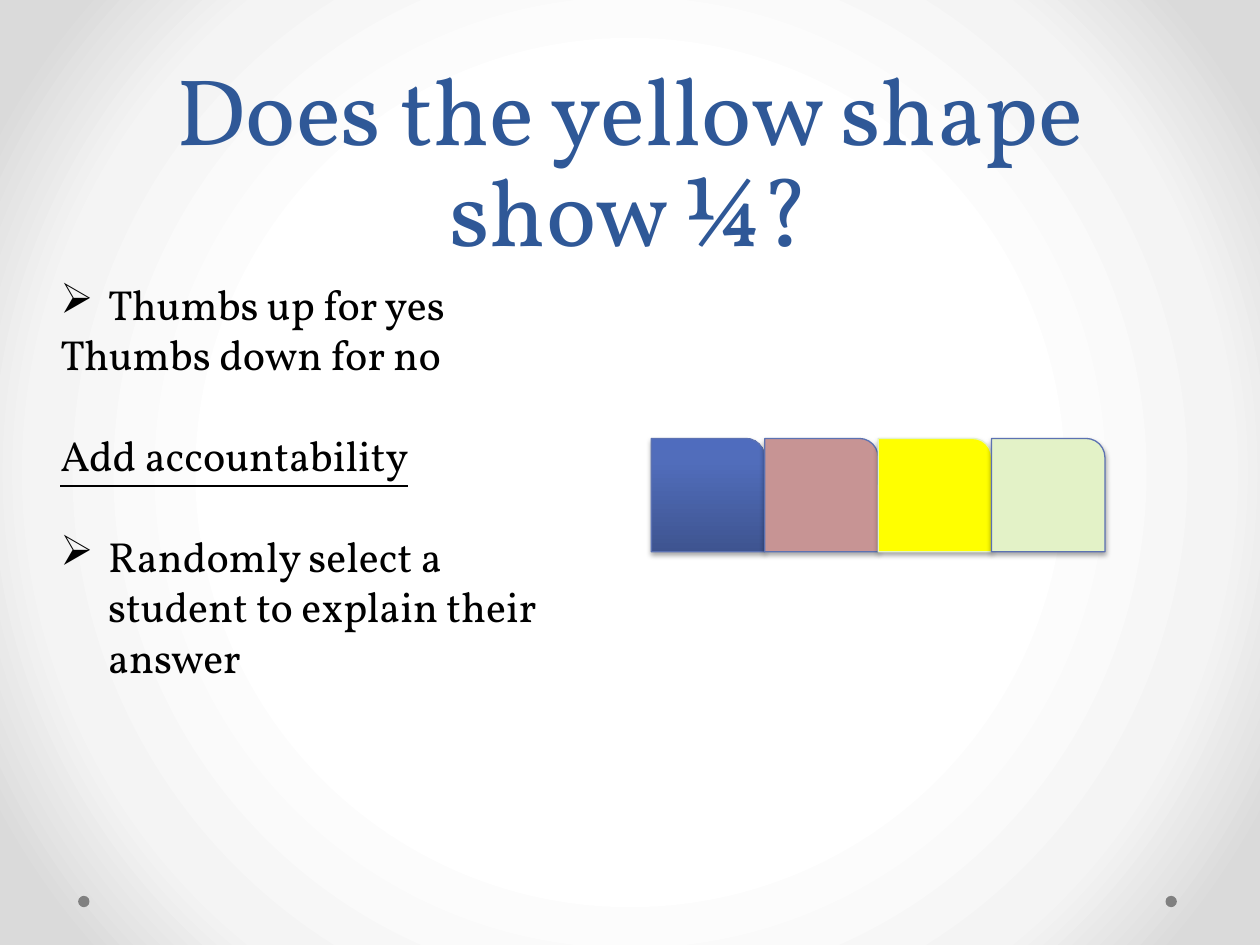
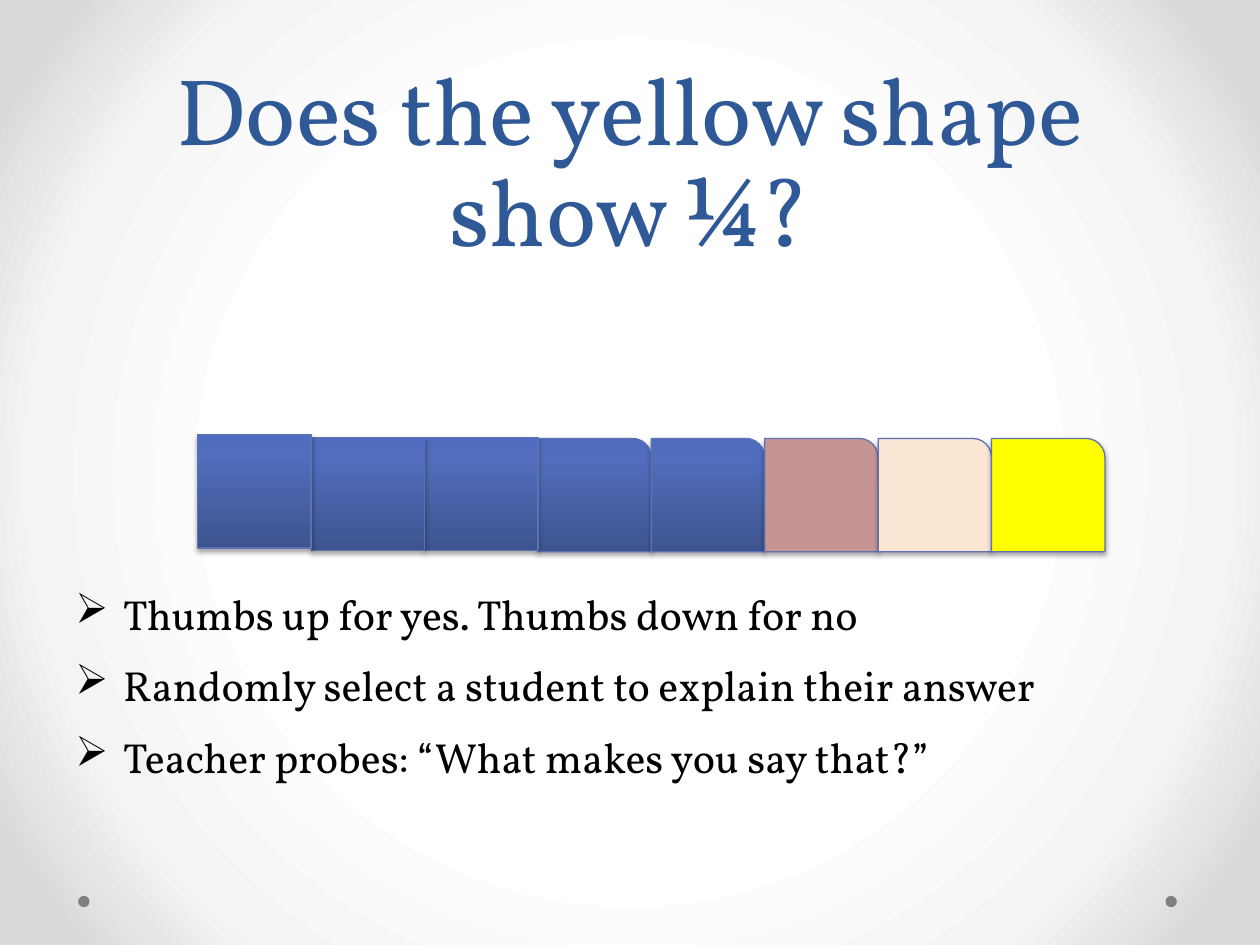
from lxml import etree
from pptx import Presentation
from pptx.dml.color import RGBColor
from pptx.enum.shapes import MSO_SHAPE as SHAPE
from pptx.enum.text import MSO_ANCHOR, MSO_AUTO_SIZE as AUTO, PP_ALIGN
from pptx.oxml import parse_xml
from pptx.oxml.ns import nsdecls, qn
from pptx.util import Inches, Pt

FONT = "Vollkorn"
COLORS = {
    "title": "2F5897", "text": "000000", "dot": "808080", "outline": "5C72B2",
    "rose": "C79494", "yellow": "FFFF00", "green": "E3F2C7", "peach": "FAE6D3",
}
BACKDROP = [(50, "FFFFFF"), (76, "F4F4F4"), (92, "DADADA")]
BLUE = [(0, "3E5490"), (80, "516DBB"), (100, "4F6CBE")]
CIRCLE = '<a:path path="circle"><a:fillToRect l="50000" t="50000" r="50000" b="50000"/></a:path>'
UPWARD = '<a:lin ang="16200000" scaled="0"/>'
TILE = 0.9
TILE_TOP = 3.48


def rgb(name):
    return RGBColor.from_string(COLORS[name])


def set_gradient(fill, owner, stops, direction):
    """Fill the owner element with a gradient of (percent, colour) stops."""
    fill.gradient()
    marks = "".join(f'<a:gs pos="{pos * 1000}"><a:srgbClr val="{color}"/></a:gs>'
                    for pos, color in stops)
    old = owner.find(qn("a:gradFill"))
    owner.replace(old, parse_xml(
        f'<a:gradFill {nsdecls("a")} rotWithShape="1"><a:gsLst>{marks}</a:gsLst>'
        f'{direction}</a:gradFill>'))


def add_text(p, text, size=24, color="text", underline=False):
    r = p.add_run()
    r.text = text
    r.font.name = FONT
    r.font.size = Pt(size)
    r.font.color.rgb = rgb(color)
    if underline:
        r.font.underline = True


class Deck:
    def __init__(self):
        self.prs = Presentation()
        self.prs.slide_width, self.prs.slide_height = Inches(10), Inches(7.5)
        self.s = None
        # Shared background
        master = self.prs.slide_master
        fill = master.background.fill
        fill.solid()
        set_gradient(fill, master.element.find(".//" + qn("p:bgPr")), BACKDROP, CIRCLE)

    def slide(self, title):
        self.s = self.prs.slides.add_slide(self.prs.slide_layouts[5])
        for left in (9.25, 0.62):
            self.dot(left)
        self.title(title)

    def shape(self, kind, left, top, size):
        sp = self.s.shapes.add_shape(kind, Inches(left), Inches(top), Inches(size), Inches(size))
        sp.shadow.inherit = False
        return sp

    def dot(self, left):
        sp = self.shape(SHAPE.OVAL, left, 7.11, 0.09)
        sp.fill.solid()
        sp.fill.fore_color.rgb = rgb("dot")
        sp.line.fill.background()

    def title(self, text):
        sp = self.s.shapes.title
        sp.left, sp.top, sp.width, sp.height = map(Inches, (0.5, 0.14, 9, 2.02))
        tf = sp.text_frame
        tf.auto_size = AUTO.NONE
        tf.word_wrap = True
        tf.vertical_anchor = MSO_ANCHOR.BOTTOM
        p = tf.paragraphs[0]
        p.alignment = PP_ALIGN.CENTER
        p.line_spacing = Pt(58)
        add_text(p, text, size=54, color="title")

    def tile(self, left, fill, top=TILE_TOP, kind=SHAPE.ROUND_1_RECTANGLE, outline="outline"):
        sp = self.shape(kind, left, top, TILE)
        props = sp.element.spPr
        if fill == "blue":
            set_gradient(sp.fill, props, BLUE, UPWARD)
        else:
            sp.fill.solid()
            sp.fill.fore_color.rgb = rgb(fill)
        sp.line.color.rgb = rgb(outline)
        sp.line.width = Pt(0.75)
        # Soft shadow below the tile
        shadow = etree.SubElement(props.find(qn("a:effectLst")), qn("a:outerShdw"),
                                  blurRad=str(Pt(3.1)), dist=str(Pt(1.8)),
                                  dir="5400000", rotWithShape="0")
        color = etree.SubElement(shadow, qn("a:srgbClr"), val="000000")
        etree.SubElement(color, qn("a:alpha"), val="35000")

    def text_box(self, box, lines):
        """Each line is (text, options): bullet, before, after, underline."""
        tf = self.s.shapes.add_textbox(*map(Inches, box)).text_frame
        tf.word_wrap = True
        tf.auto_size = AUTO.SHAPE_TO_FIT_TEXT
        for i, (text, options) in enumerate(lines):
            p = tf.add_paragraph() if i else tf.paragraphs[0]
            p.space_before = Pt(options.get("before", 0))
            p.space_after = Pt(options.get("after", 0))
            if options.get("bullet"):
                pPr = p._p.get_or_add_pPr()
                pPr.set("marL", str(Inches(0.38)))
                pPr.set("indent", str(Inches(-0.38)))
                etree.SubElement(pPr, qn("a:buChar"), char="➢")
            add_text(p, text, underline=options.get("underline", False))


def main():
    deck = Deck()
    question = "Does the yellow shape show ¼?"

    # Slide 1: four equal tiles
    deck.slide(question)
    for i, fill in enumerate(("blue", "rose", "yellow", "green")):
        deck.tile(5.17 + i * TILE, fill, outline="green" if fill == "yellow" else "outline")
    deck.text_box((0.38, 2.16, 4.01, 3.74), [
        ("Thumbs up for yes", {"bullet": True}),
        ("Thumbs down for no", {}),
        ("Add accountability", {"before": 28.8, "underline": True}),
        ("Randomly select a student to explain their answer", {"bullet": True, "before": 28.8}),
    ])

    # Slide 2: eight tiles, the first three square
    deck.slide(question)
    for i, fill in enumerate(("blue", "blue", "rose", "peach", "yellow")):
        deck.tile(4.27 + i * TILE, fill)
    for i, top in enumerate((3.47, 3.47, 3.45)):
        deck.tile(3.37 - i * TILE, "blue", top=top, kind=SHAPE.RECTANGLE)
    deck.text_box((0.5, 4.62, 8.9, 2.22), [
        (text, {"bullet": True, "after": 12}) for text in (
            "Thumbs up for yes. Thumbs down for no",
            "Randomly select a student to explain their answer",
            "Teacher probes: “What makes you say that?”",
        )
    ])

    deck.prs.save("out.pptx")


if __name__ == "__main__":
    main()
